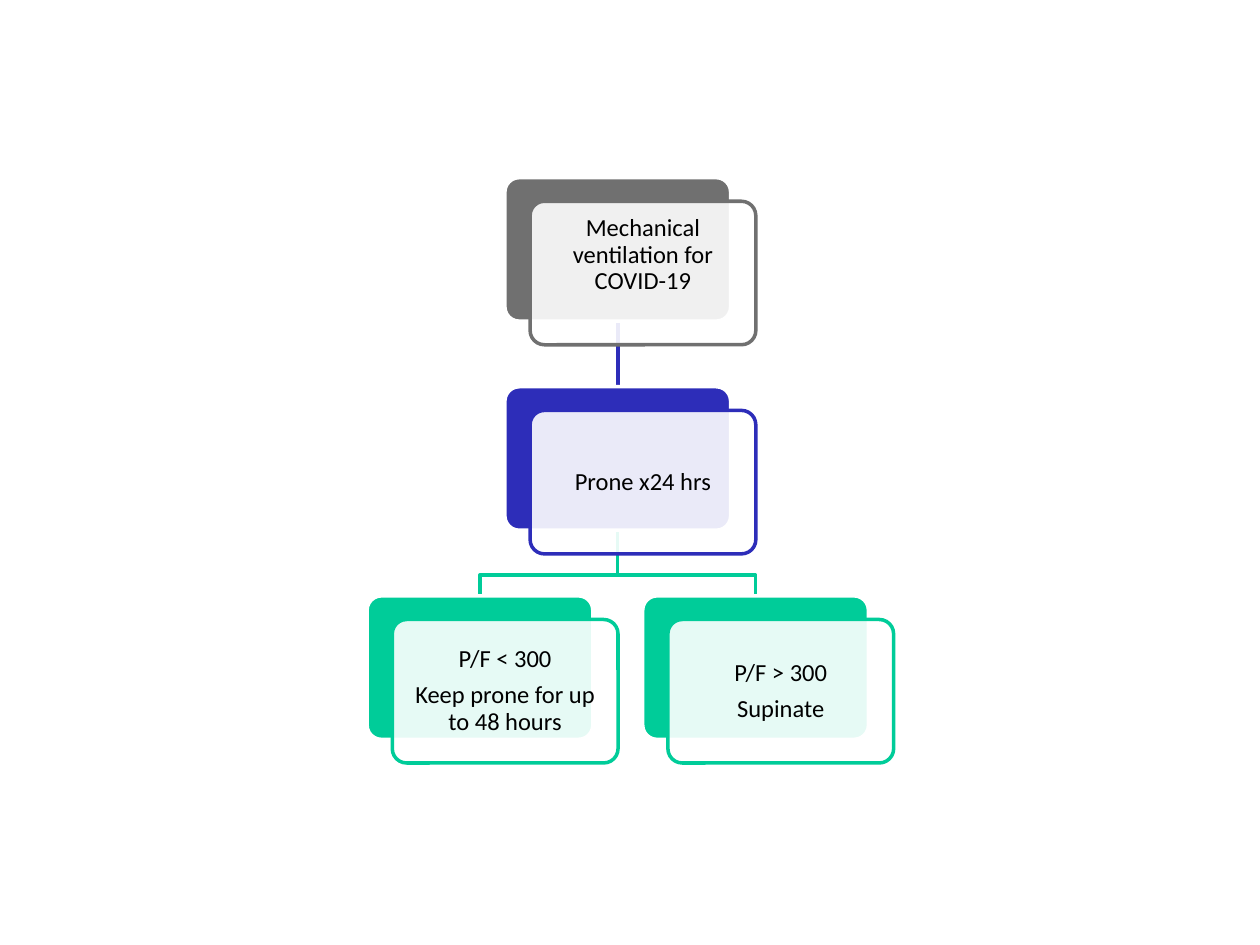
from dataclasses import dataclass

from lxml.etree import SubElement
from pptx import Presentation
from pptx.dml.color import RGBColor
from pptx.enum.shapes import MSO_CONNECTOR as Link, MSO_SHAPE as Kind
from pptx.enum.text import MSO_ANCHOR as Anchor, PP_ALIGN as Align
from pptx.oxml.ns import qn
from pptx.util import Pt

GREY = RGBColor(0x70, 0x70, 0x70)
BLUE = RGBColor(0x2D, 0x2D, 0xB9)
GREEN = RGBColor(0x00, 0xCC, 0x99)
WHITE = RGBColor(0xFF, 0xFF, 0xFF)
BLACK = RGBColor(0x00, 0x00, 0x00)

# Layout in points
WIDE, HIGH = 129, 82
MID, TOP = 353, 101.5
STEP, HALF = 119.5, 78.75  # row pitch, half the column pitch
RIGHT, DOWN = 14.4, 13.5  # offset of the front card
BEND = 12  # height of the elbow above a card
INSET = 4.5


@dataclass(frozen=True)
class Node:
    lines: tuple[str, ...]
    col: int
    row: int
    color: RGBColor
    lift: float = 0  # extra bottom inset

    @property
    def mid(self) -> float:
        return MID + self.col * HALF

    @property
    def top(self) -> float:
        return TOP + self.row * STEP


ROOT = Node(("Mechanical ventilation for COVID-19",), 0, 0, GREY, 20.5)
PRONE = Node(("Prone x24 hrs",), 0, 1, BLUE)
LOW = Node(("P/F < 300", "Keep prone for up to 48 hours"), -1, 2, GREEN)
HIGHER = Node(("P/F > 300", "Supinate"), 1, 2, GREEN)
NODES = (ROOT, PRONE, LOW, HIGHER)
LINKS = ((PRONE, HIGHER), (PRONE, LOW), (ROOT, PRONE))


def set_line(shape, color: RGBColor) -> None:
    shape.line.color.rgb = color
    shape.line.width = Pt(2)


def join(shapes, start: Node, end: Node) -> None:
    """Link two cards, with an elbow when the columns differ."""
    low = start.top + HIGH
    if start.col == end.col:
        link = shapes.add_connector(
            Link.STRAIGHT, Pt(start.mid), Pt(low), Pt(end.mid), Pt(end.top))
        SubElement(link._element.spPr, qn("a:effectLst"))
    else:
        bend = end.top - BEND
        route = ((start.mid, bend), (end.mid, bend), (end.mid, end.top))
        pen = shapes.build_freeform(Pt(start.mid), Pt(low))
        pen.add_line_segments([(Pt(x), Pt(y)) for x, y in route], close=False)
        link = pen.convert_to_shape()
        link.fill.background()
        link.shadow.inherit = False
    set_line(link, end.color)


def add_card(shapes, left: float, top: float, fill: RGBColor, line: RGBColor):
    card = shapes.add_shape(
        Kind.ROUNDED_RECTANGLE, Pt(left), Pt(top), Pt(WIDE), Pt(HIGH))
    card.adjustments[0] = 0.1
    card.shadow.inherit = False
    card.fill.solid()
    card.fill.fore_color.rgb = fill
    set_line(card, line)
    return card


def add_text(card, node: Node) -> None:
    frame = card.text_frame
    frame.word_wrap = True
    frame.vertical_anchor = Anchor.MIDDLE
    frame.margin_left = frame.margin_right = frame.margin_top = Pt(INSET)
    frame.margin_bottom = Pt(INSET + node.lift)
    frame.text = "\n".join(node.lines)
    for para in frame.paragraphs:
        para.alignment = Align.CENTER
        para.line_spacing = 0.9
        para.space_after = Pt(5.5)
        para.font.name = "Calibri"
        para.font.size = Pt(14)
        para.font.color.rgb = BLACK


def draw(shapes, node: Node) -> None:
    left = node.mid - WIDE / 2
    add_card(shapes, left, node.top, node.color, WHITE)
    front = add_card(shapes, left + RIGHT, node.top + DOWN, WHITE, node.color)
    # Let the back card show through
    tint = front._element.spPr.find(qn("a:solidFill"))[0]
    SubElement(tint, qn("a:alpha"), val="90000")
    add_text(front, node)


def main() -> None:
    deck = Presentation()
    deck.slide_width, deck.slide_height = Pt(720), Pt(540)
    shapes = deck.slides.add_slide(deck.slide_layouts[6]).shapes
    # Links lie behind the cards
    for start, end in LINKS:
        join(shapes, start, end)
    for node in NODES:
        draw(shapes, node)
    deck.save("out.pptx")


if __name__ == "__main__":
    main()
